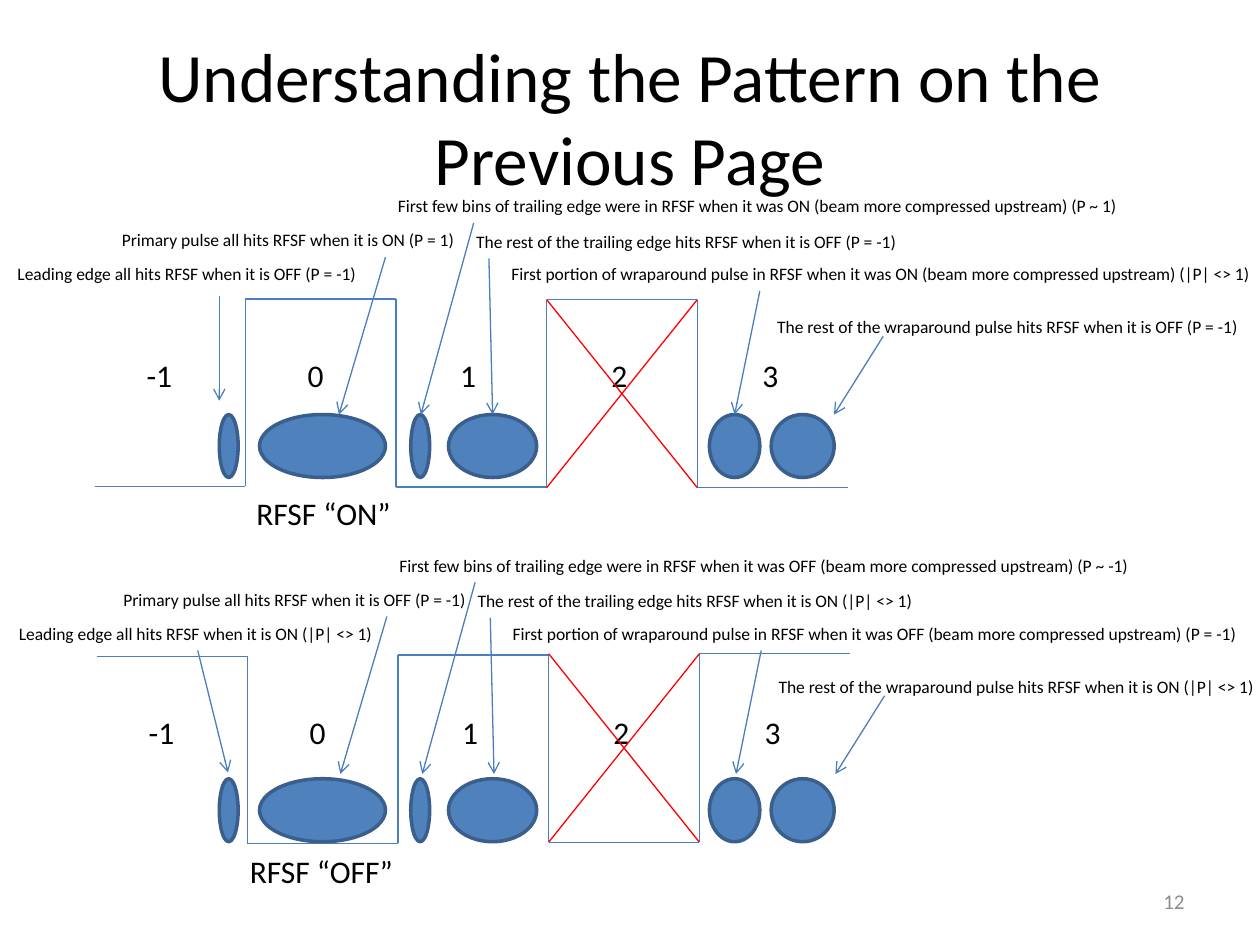
import dataclasses

import lxml.etree
import pptx
import pptx.dml.color
import pptx.enum.shapes
import pptx.enum.text
import pptx.oxml.ns
import pptx.util

Pt = pptx.util.Pt
ALIGN = pptx.enum.text.PP_ALIGN
ANCHOR = pptx.enum.text.MSO_ANCHOR


@dataclasses.dataclass(frozen=True)
class Theme:
    font: str = "Calibri"
    ink: str = "000000"
    muted: str = "8C8C8C"
    trace: str = "4B7EBC"
    veto: str = "FF0000"
    pulse: str = "4F81BD"
    pulse_edge: str = "3A5F8C"
    title: float = 39.6
    label: float = 18
    page: float = 12
    callout: float = 10
    thin: float = 0.75
    thick: float = 2


@dataclasses.dataclass(frozen=True)
class Box:
    left: float
    top: float
    width: float
    height: float


THEME = Theme()
BINS = [("-1", 37.1), ("0", 126.4), ("1", 213.5), ("2", 299.9), ("3", 386.3)]
PULSES = [(0, 10.8), (23, 72), (109.4, 10.8), (131, 50.4), (280.1, 28.8), (315.4, 36)]
CALLOUT_SPOTS = [(2.9, 39), (62.6, 19.4), (220.3, 0), (265, 20.2), (285.1, 38.9), (437, 69.1)]
SHARED_ARROWS = [
    (220.3, 38.9, 193.7, 128.9),
    (270.7, 19.4, 240.5, 128.9),
    (279.4, 39.6, 281.5, 128.9),
    (434.2, 58.3, 419.8, 128.9),
    (504.7, 84.2, 476.6, 128.9),
]
ON_CALLOUTS = [
    ("Leading edge all hits RFSF when it is OFF (P = -1)", 210.2),
    ("Primary pulse all hits RFSF when it is ON (P = 1)", 206.6),
    ("First few bins of trailing edge were in RFSF when it was ON "
     "(beam more compressed upstream) (P ~ 1)", 432),
    ("The rest of the trailing edge hits RFSF when it is OFF (P = -1)", 257.8),
    ("First portion of wraparound pulse in RFSF when it was ON "
     "(beam more compressed upstream) (|P| <> 1)", 439.9),
    ("The rest of the wraparound pulse hits RFSF when it is OFF (P = -1)", 281.5),
]
OFF_CALLOUTS = [
    ("Leading edge all hits RFSF when it is ON (|P| <> 1)", 218.9),
    ("Primary pulse all hits RFSF when it is OFF (P = -1)", 212.4),
    ("First few bins of trailing edge were in RFSF when it was OFF "
     "(beam more compressed upstream) (P ~ -1)", 437.8),
    ("The rest of the trailing edge hits RFSF when it is ON (|P| <> 1)", 266.4),
    ("First portion of wraparound pulse in RFSF when it was OFF "
     "(beam more compressed upstream) (P = -1)", 434.2),
    ("The rest of the wraparound pulse hits RFSF when it is ON (|P| <> 1)", 290.2),
]


def rgb(color):
    return pptx.dml.color.RGBColor.from_string(color)


def add_text(slide, box, words, size=THEME.label, color=THEME.ink,
             align=ALIGN.LEFT, anchor=ANCHOR.TOP, wrap=False):
    frame = slide.shapes.add_textbox(
        Pt(box.left), Pt(box.top), Pt(box.width), Pt(box.height)).text_frame
    frame.word_wrap = wrap
    frame.vertical_anchor = anchor
    paragraph = frame.paragraphs[0]
    paragraph.alignment = align
    run = paragraph.add_run()
    run.text = words
    run.font.name = THEME.font
    run.font.size = Pt(size)
    run.font.color.rgb = rgb(color)


def add_line(slide, ends, color=THEME.trace, arrow=False):
    line = slide.shapes.add_connector(
        pptx.enum.shapes.MSO_CONNECTOR.STRAIGHT, *[Pt(end) for end in ends])
    line.line.color.rgb = rgb(color)
    line.line.width = Pt(THEME.thin)
    qn = pptx.oxml.ns.qn
    properties = line._element.spPr
    if arrow:
        lxml.etree.SubElement(properties.find(qn("a:ln")), qn("a:tailEnd"), type="arrow")
    lxml.etree.SubElement(properties, qn("a:effectLst"))


def add_signal(slide, box, state, starts_high, drift):
    step = box.width / len(BINS)
    edges = [box.left + step * i for i in range(len(BINS) + 1)]
    levels = [box.top + drift * i + (0 if (i % 2 == 0) == starts_high else box.height)
              for i in range(len(BINS))]
    for i, level in enumerate(levels):
        add_line(slide, (edges[i], level, edges[i + 1], level))
        if i + 1 < len(levels):
            add_line(slide, (edges[i + 1], level, edges[i + 1], levels[i + 1]))
    for name, center in BINS:
        add_text(slide, Box(box.left + center - 14.4, box.top + 29.2, 28.8, 28.8),
                 name, align=ALIGN.CENTER)
    add_text(slide, Box(box.left + 78.4, box.top + box.height + 0.9, 98, 28.8),
             state, align=ALIGN.RIGHT)
    left, right = edges[3], edges[4]
    upper, lower = sorted(levels[3:])
    add_line(slide, (left, upper, right, lower), color=THEME.veto)
    add_line(slide, (right, upper, left, lower), color=THEME.veto)


def add_pulses(slide, box):
    for offset, width in PULSES:
        pulse = slide.shapes.add_shape(
            pptx.enum.shapes.MSO_SHAPE.OVAL,
            Pt(box.left + offset), Pt(box.top), Pt(width), Pt(box.height))
        pulse.shadow.inherit = False
        pulse.fill.solid()
        pulse.fill.fore_color.rgb = rgb(THEME.pulse)
        pulse.line.color.rgb = rgb(THEME.pulse_edge)
        pulse.line.width = Pt(THEME.thick)


def add_callouts(slide, box, callouts, leading_arrow):
    for (words, width), (x, y) in zip(callouts, CALLOUT_SPOTS):
        add_text(slide, Box(box.left + x, box.top + y, width, 19.4),
                 words, size=THEME.callout)
    for x1, y1, x2, y2 in [leading_arrow, *SHARED_ARROWS]:
        add_line(slide, (box.left + x1, box.top + y1, box.left + x2, box.top + y2),
                 arrow=True)


def main():
    deck = pptx.Presentation()
    deck.slide_width, deck.slide_height = Pt(720), Pt(540)
    slide = deck.slides.add_slide(deck.slide_layouts[6])

    add_signal(slide, Box(54, 170.6, 430.6, 107.3), "RFSF “ON”", False, 0.2)
    add_signal(slide, Box(55.2, 375, 430.6, 107.3), "RFSF “OFF”", True, -0.35)
    add_pulses(slide, Box(125.3, 236.9, 351.4, 36))
    add_callouts(slide, Box(0, 108, 720, 129), ON_CALLOUTS, (125.3, 61.2, 125.3, 121))
    add_pulses(slide, Box(125.3, 445, 351.4, 36))
    add_callouts(slide, Box(0.8, 313.4, 720, 129), OFF_CALLOUTS, (112.2, 58.3, 129.5, 128))
    add_text(slide, Box(36, 21.6, 648, 90), "Understanding the Pattern on the Previous Page",
             size=THEME.title, align=ALIGN.CENTER, anchor=ANCHOR.MIDDLE, wrap=True)
    add_text(slide, Box(516, 500.5, 168, 28.8), "12", size=THEME.page, color=THEME.muted,
             align=ALIGN.RIGHT, anchor=ANCHOR.MIDDLE, wrap=True)
    deck.save("out.pptx")


if __name__ == "__main__":
    main()
